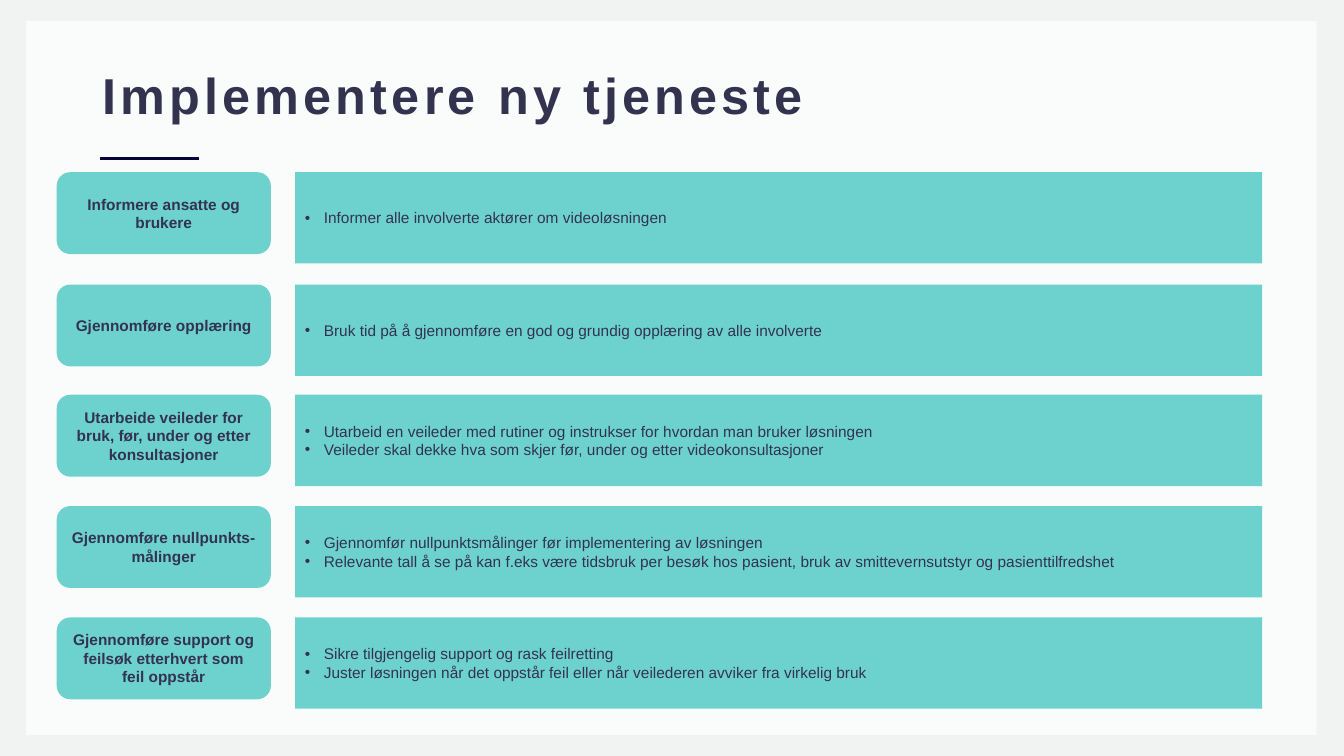
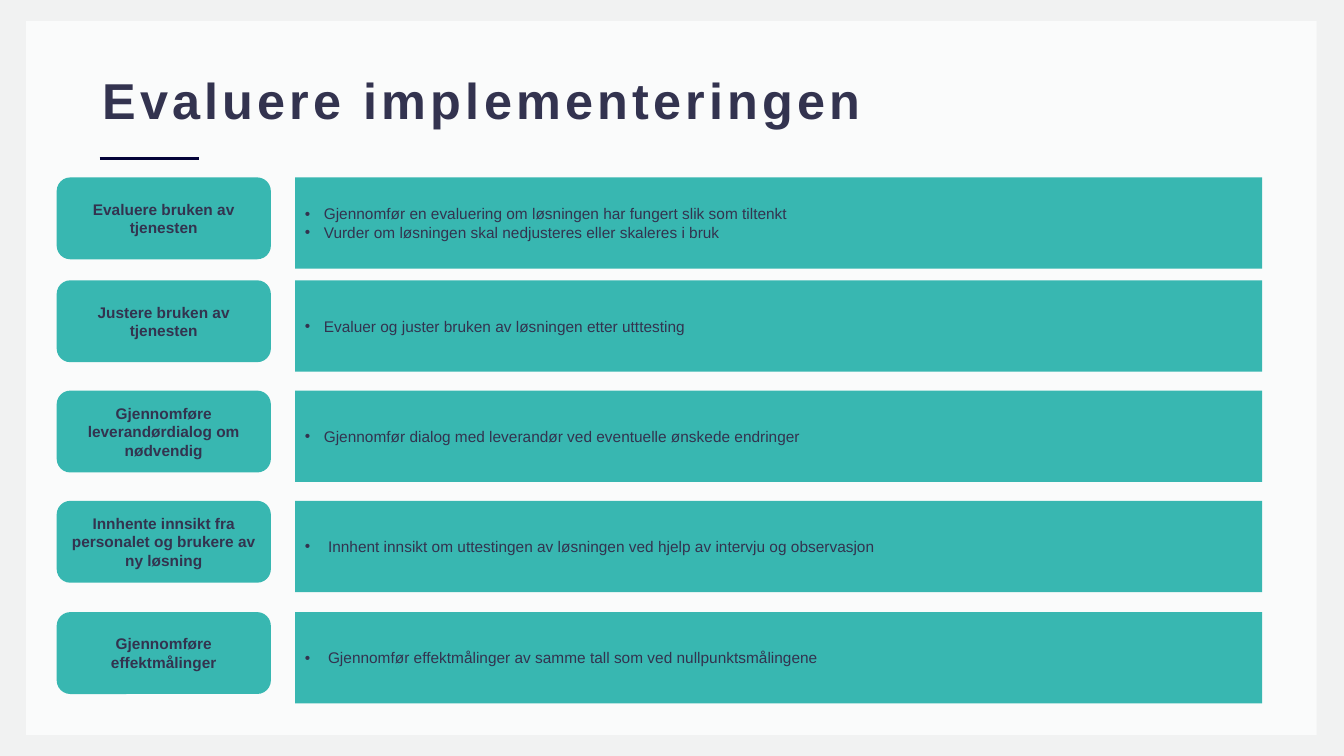
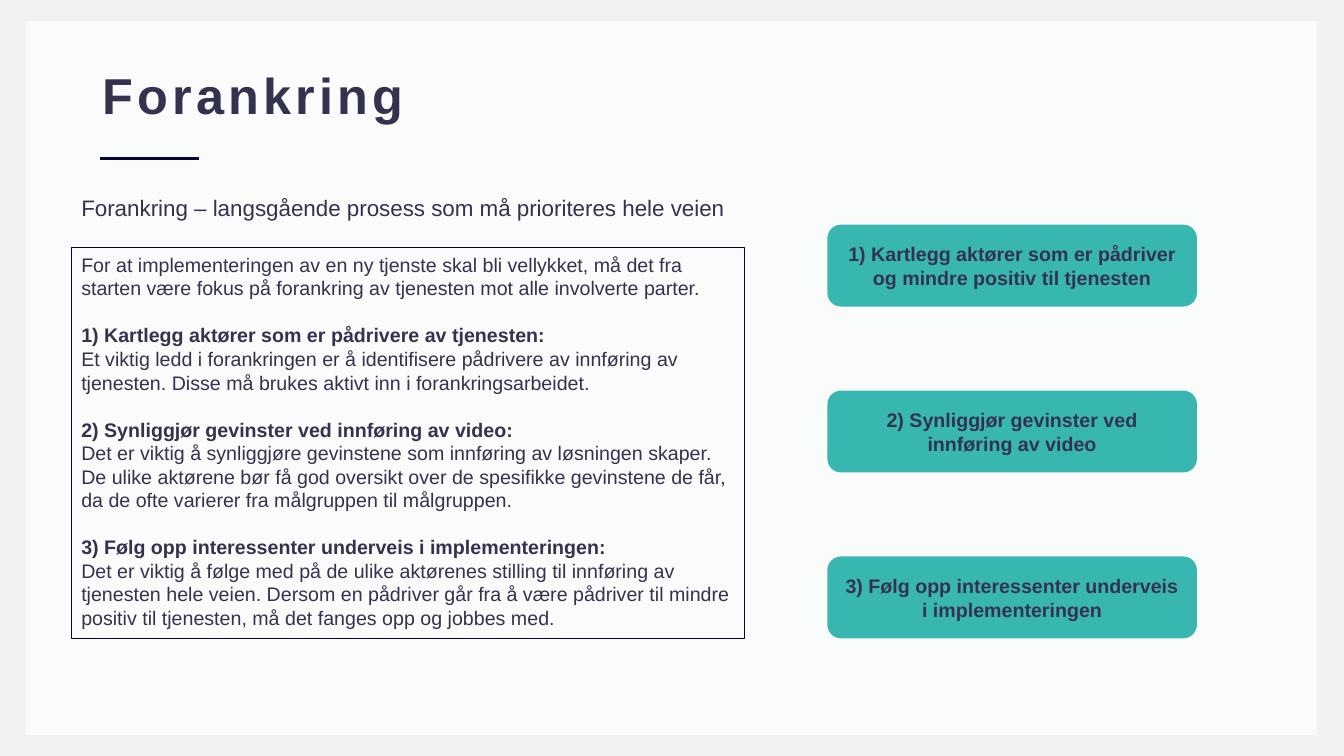
from dataclasses import dataclass

from lxml import etree
from pptx import Presentation
from pptx.dml.color import RGBColor
from pptx.enum.shapes import MSO_CONNECTOR, MSO_SHAPE
from pptx.enum.text import MSO_ANCHOR, MSO_AUTO_SIZE, PP_ALIGN
from pptx.oxml.ns import qn
from pptx.util import Pt

RECT, ROUNDED = MSO_SHAPE.RECTANGLE, MSO_SHAPE.ROUNDED_RECTANGLE
STRAIGHT = MSO_CONNECTOR.STRAIGHT
TOP, MIDDLE = MSO_ANCHOR.TOP, MSO_ANCHOR.MIDDLE
LEFT, CENTER = PP_ALIGN.LEFT, PP_ALIGN.CENTER
NO_AUTOFIT = MSO_AUTO_SIZE.NONE

EMU_PER_PX = 9525
FONT = "Arial"
COLORS = {
    "backdrop": "F1F2F2",
    "panel": "FFFFFF",
    "rule": "040439",
    "text": "33334F",
    "light_teal": "6DD2CD",
    "teal": "38B7B1",
}


@dataclass(frozen=True)
class Box:
    left: int
    top: int
    width: int
    height: int

    def emu(self) -> list[int]:
        return [px(v) for v in (self.left, self.top, self.width, self.height)]


@dataclass(frozen=True)
class Row:
    top: int
    label: str
    bullets: tuple[str, ...]
    indent: int = 18


@dataclass(frozen=True)
class Section:
    heading: str
    body: str


IMPLEMENT_ROWS = (
    Row(164, "Informere ansatte og brukere",
        ("Informer alle involverte aktører om videoløsningen",)),
    Row(271, "Gjennomføre opplæring",
        ("Bruk tid på å gjennomføre en god og grundig opplæring av alle involverte",)),
    Row(376, "Utarbeide veileder for bruk, før, under og etter konsultasjoner",
        ("Utarbeid en veileder med rutiner og instrukser for hvordan man bruker løsningen",
         "Veileder skal dekke hva som skjer før, under og etter videokonsultasjoner")),
    Row(482, "Gjennomføre nullpunkts-målinger",
        ("Gjennomfør nullpunktsmålinger før implementering av løsningen",
         "Relevante tall å se på kan f.eks være tidsbruk per besøk hos pasient, "
         "bruk av smittevernsutstyr og pasienttilfredshet")),
    Row(588, "Gjennomføre support og feilsøk etterhvert som feil oppstår",
        ("Sikre tilgjengelig support og rask feilretting",
         "Juster løsningen når det oppstår feil eller når veilederen avviker fra virkelig bruk")),
)

EVALUATE_ROWS = (
    Row(169, "Evaluere bruken av tjenesten",
        ("Gjennomfør en evaluering om løsningen har fungert slik som tiltenkt",
         "Vurder om løsningen skal nedjusteres eller skaleres i bruk")),
    Row(267, "Justere bruken av tjenesten",
        ("Evaluer og juster bruken av løsningen etter utttesting",)),
    Row(372, "Gjennomføre leverandørdialog om nødvendig",
        ("Gjennomfør dialog med leverandør ved eventuelle ønskede endringer",)),
    Row(477, "Innhente innsikt fra personalet og brukere av ny løsning",
        ("Innhent innsikt om uttestingen av løsningen ved hjelp av intervju og observasjon",),
        indent=22),
    Row(583, "Gjennomføre effektmålinger",
        ("Gjennomfør effektmålinger av samme tall som ved nullpunktsmålingene",),
        indent=22),
)

ANCHORING_INTRO = (
    "For at implementeringen av en ny tjenste skal bli vellykket, må det fra starten "
    "være fokus på forankring av tjenesten mot alle involverte parter."
)
ANCHORING_SECTIONS = (
    Section("1) Kartlegg aktører som er pådrivere av tjenesten:",
            "Et viktig ledd i forankringen er å identifisere pådrivere av innføring av "
            "tjenesten. Disse må brukes aktivt inn i forankringsarbeidet."),
    Section("2) Synliggjør gevinster ved innføring av video:",
            "Det er viktig å synliggjøre gevinstene som innføring av løsningen skaper. "
            "De ulike aktørene bør få god oversikt over de spesifikke gevinstene de får, "
            "da de ofte varierer fra målgruppen til målgruppen."),
    Section("3) Følg opp interessenter underveis i implementeringen:",
            "Det er viktig å følge med på de ulike aktørenes stilling til innføring av "
            "tjenesten hele veien. Dersom en pådriver går fra å være pådriver til mindre "
            "positiv til tjenesten, må det fanges opp og jobbes med."),
)
ANCHORING_STEPS = (
    "1) Kartlegg aktører som er pådriver og mindre positiv til tjenesten",
    "2) Synliggjør gevinster ved innføring av video",
    "3) Følg opp interessenter underveis i implementeringen",
)


def px(value: int) -> int:
    return value * EMU_PER_PX


def rgb(name: str) -> RGBColor:
    return RGBColor.from_string(COLORS[name])


def write(tf, text: str, *, size: int = 11, bold: bool = False, align=LEFT,
          indent: int = 0, before: float = 0, line_spacing: float = 1.0,
          tracking: int = 0) -> None:
    p = tf.paragraphs[0] if not tf.text else tf.add_paragraph()
    if indent:
        p_pr = p._p.get_or_add_pPr()
        p_pr.set("marL", str(px(indent)))
        p_pr.set("indent", str(-px(indent)))
        etree.SubElement(p_pr, qn("a:buFont")).set("typeface", FONT)
        etree.SubElement(p_pr, qn("a:buChar")).set("char", "•")
    p.alignment = align
    p.line_spacing = line_spacing
    if before:
        p.space_before = Pt(before)
    r = p.add_run()
    r.text = text
    r.font.name = FONT
    r.font.size = Pt(size)
    r.font.bold = bold
    r.font.color.rgb = rgb("text")
    if tracking:
        r._r.get_or_add_rPr().set("spc", str(tracking))


def add_box(slide, box: Box, *, shape=RECT, fill: str = "", line: str = "", anchor=MIDDLE):
    sp = slide.shapes.add_shape(shape, *box.emu())
    sp.shadow.inherit = False
    if fill:
        sp.fill.solid()
        sp.fill.fore_color.rgb = rgb(fill)
    else:
        sp.fill.background()
    if line:
        sp.line.color.rgb = rgb(line)
        sp.line.width = Pt(0.75)
    else:
        sp.line.fill.background()
    sp.text_frame.word_wrap = True
    sp.text_frame.vertical_anchor = anchor
    return sp


def add_label(slide, box: Box, text: str, fill: str, size: int) -> None:
    sp = add_box(slide, box, shape=ROUNDED, fill=fill)
    write(sp.text_frame, text, size=size, bold=True, align=CENTER)


def decorate_layout(layout, slide) -> None:
    layout.background.fill.solid()
    layout.background.fill.fore_color.rgb = rgb("backdrop")
    panel = add_box(slide, Box(25, 20, 1229, 680), fill="panel")
    color = panel.element.spPr.find(qn("a:solidFill"))[0]
    etree.SubElement(color, qn("a:alpha")).set("val", "70000")
    rule = slide.shapes.add_connector(STRAIGHT, px(95), px(151), px(190), px(151))
    rule.line.color.rgb = rgb("rule")
    rule.line.width = Pt(2)
    etree.SubElement(rule.element.spPr, qn("a:effectLst"))
    for sp in (panel, rule):
        layout.shapes.element.append(sp.element)


def add_slide(prs, layout, title: str, title_top: int = 38):
    slide = prs.slides.add_slide(layout)
    sp = slide.shapes.title
    sp.left, sp.top, sp.width, sp.height = Box(88, title_top, 1104, 112).emu()
    tf = sp.text_frame
    tf.auto_size = NO_AUTOFIT
    tf.vertical_anchor = MIDDLE
    write(tf, title, size=36, bold=True, line_spacing=0.9, tracking=300)
    return slide


def add_rows(slide, rows: tuple[Row, ...], fill: str) -> None:
    for row in rows:
        add_label(slide, Box(54, row.top, 204, 78), row.label, fill, 11)
        sp = add_box(slide, Box(281, row.top, 921, 87), fill=fill)
        for bullet in row.bullets:
            write(sp.text_frame, bullet, indent=row.indent)


def add_anchoring(slide) -> None:
    heading = slide.shapes.add_textbox(*Box(68, 180, 641, 36).emu())
    heading.text_frame.word_wrap = True
    write(heading.text_frame,
          "Forankring – langsgående prosess som må prioriteres hele veien", size=16)
    tf = add_box(slide, Box(68, 236, 641, 372), line="rule", anchor=TOP).text_frame
    write(tf, ANCHORING_INTRO, size=14)
    for section in ANCHORING_SECTIONS:
        write(tf, section.heading, size=14, bold=True, before=16.8)
        write(tf, section.body, size=14)
    for i, step in enumerate(ANCHORING_STEPS):
        add_label(slide, Box(788, 214 + 158 * i, 352, 78), step, "teal", 14)


def main() -> None:
    prs = Presentation()
    prs.slide_width, prs.slide_height = px(1280), px(720)
    layout = prs.slide_layouts[5]
    implement = add_slide(prs, layout, "Implementere ny tjeneste")
    decorate_layout(layout, implement)
    add_rows(implement, IMPLEMENT_ROWS, "light_teal")
    evaluate = add_slide(prs, layout, "Evaluere implementeringen", title_top=42)
    add_rows(evaluate, EVALUATE_ROWS, "teal")
    add_anchoring(add_slide(prs, layout, "Forankring"))
    prs.save("out.pptx")


if __name__ == "__main__":
    main()
